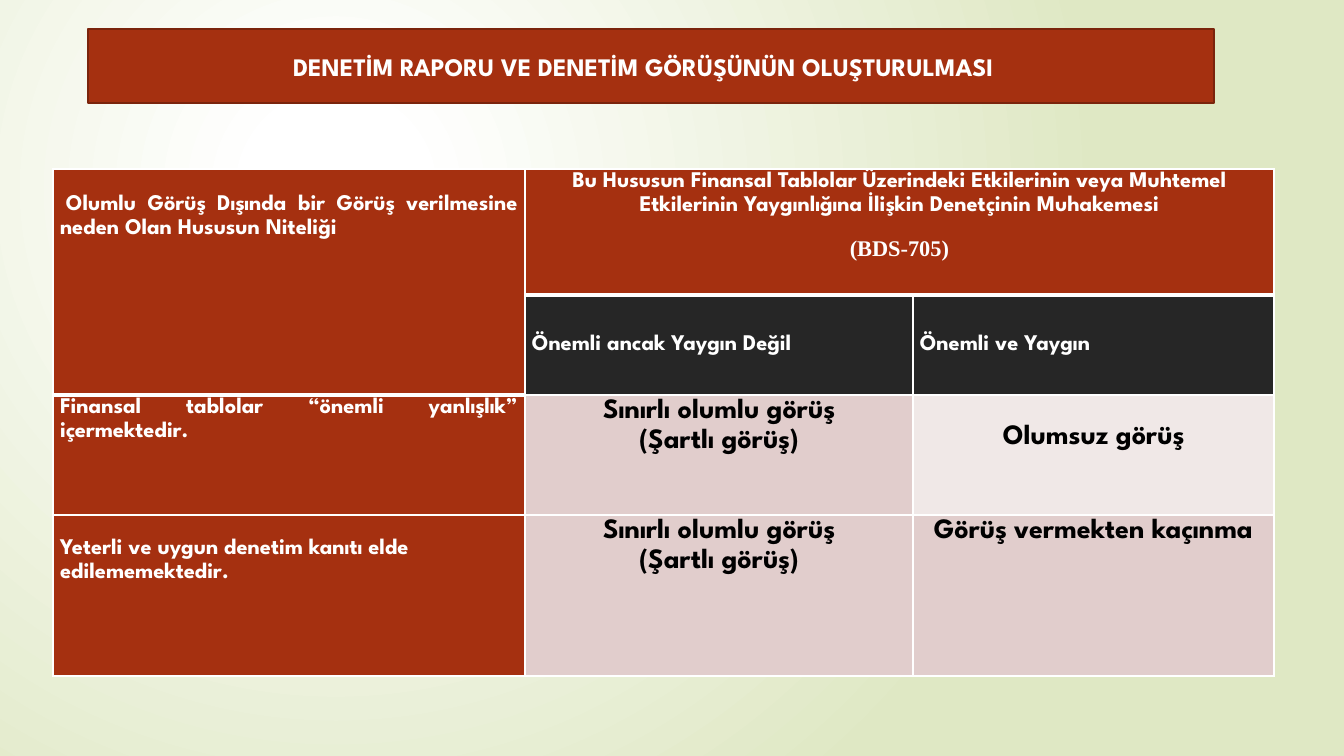
from lxml.etree import SubElement
from pptx import Presentation
from pptx.dml.color import RGBColor
from pptx.enum.text import MSO_ANCHOR, PP_ALIGN as Align
from pptx.oxml.ns import qn
from pptx.util import Pt

PX = 914400 / 100.8
FONT = "League Spartan"
RED, DARK, ROSE, PALE = "A53010", "262626", "E1CDCC", "F0E8E7"
WHITE, BLACK = "FFFFFF", "000000"


def px(length):
    return round(length * PX)


def color(value):
    return RGBColor.from_string(value)


presentation = Presentation()
presentation.slide_width = px(1344)
presentation.slide_height = px(756)
slide = presentation.slides.add_slide(presentation.slide_layouts[5])

background = slide.background.fill
background.gradient()
for stop, position, value in zip(background.gradient_stops, (0.1, 1), (WHITE, "DFE8C4")):
    stop.position = position
    stop.color.rgb = color(value)
gradient = slide.element.find(".//" + qn("a:gradFill"))
gradient.remove(gradient.find(qn("a:lin")))
circle = SubElement(gradient, qn("a:path"), path="circle")
SubElement(circle, qn("a:fillToRect"), l="50000", t="50000", r="100000", b="100000")

title = slide.shapes.title
title.left, title.top, title.width, title.height = px(88), px(29), px(1126), px(74)
title.fill.solid()
title.fill.fore_color.rgb = color(RED)
title.line.color.rgb = color("7A240C")
title.line.width = Pt(1.25)
title.text_frame.text = "DENETİM RAPORU VE DENETİM GÖRÜŞÜNÜN OLUŞTURULMASI"
title.text_frame.vertical_anchor = MSO_ANCHOR.MIDDLE
title.text_frame.margin_right = px(25)
paragraph = title.text_frame.paragraphs[0]
paragraph.alignment = Align.CENTER
font = paragraph.runs[0].font
font.name, font.size, font.bold = FONT, Pt(18), True
font.color.rgb = color(WHITE)

column_widths = (472, 388, 361)
row_heights = (126, 100, 120, 161)
table = slide.shapes.add_table(
    4, 3, px(53), px(169), px(sum(column_widths)), px(sum(row_heights))
).table
for column, width in zip(table.columns, column_widths):
    column.width = px(width)
for row, height in zip(table.rows, row_heights):
    row.height = px(height)

fills = (
    (RED, RED, RED),
    (RED, DARK, DARK),
    (RED, ROSE, PALE),
    (RED, ROSE, ROSE),
)
heavy_bottoms = {(0, 0), (1, 0), (0, 1), (0, 2)}
for row, row_fills in enumerate(fills):
    for column, fill in enumerate(row_fills):
        cell = table.cell(row, column)
        properties = cell._tc.get_or_add_tcPr()
        for side in "LRTB":
            width = 3 if side == "B" and (row, column) in heavy_bottoms else 1
            border = SubElement(properties, qn(f"a:ln{side}"), w=str(Pt(width)))
            border_fill = SubElement(border, qn("a:solidFill"))
            SubElement(border_fill, qn("a:srgbClr"), val=WHITE)
        cell.fill.solid()
        cell.fill.fore_color.rgb = color(fill)
table.cell(0, 0).merge(table.cell(1, 0))
table.cell(0, 1).merge(table.cell(0, 2))

qualified = "Sınırlı olumlu görüş\n(Şartlı görüş)"
cells = (
    (0, 0, "Olumlu Görüş Dışında bir Görüş verilmesine neden Olan Hususun Niteliği",
     Align.JUSTIFY, 23, 0),
    (0, 1, "Bu Hususun Finansal Tablolar Üzerindeki Etkilerinin veya Muhtemel "
           "Etkilerinin Yaygınlığına İlişkin Denetçinin Muhakemesi\n(BDS-705)",
     Align.CENTER, 0, 6),
    (1, 1, "Önemli ancak Yaygın Değil", Align.LEFT, 37, 0),
    (1, 2, "Önemli ve Yaygın", Align.LEFT, 37, 0),
    (2, 0, "Finansal tablolar “önemli yanlışlık” içermektedir.", Align.JUSTIFY, 0, 0),
    (2, 1, qualified, Align.CENTER, 0, 0),
    (2, 2, "Olumsuz görüş", Align.CENTER, 26, 0),
    (3, 0, "Yeterli ve uygun denetim kanıtı elde edilememektedir.", Align.LEFT, 21, 0),
    (3, 1, qualified, Align.CENTER, 0, 0),
    (3, 2, "Görüş vermekten kaçınma", Align.CENTER, 0, 0),
)
for row, column, text, alignment, top, spacing in cells:
    cell = table.cell(row, column)
    cell.margin_left = cell.margin_right = px(7)
    cell.margin_top, cell.margin_bottom = px(top), 0
    cell.text_frame.text = text
    is_opinion = row > 1 and column > 0
    for paragraph in cell.text_frame.paragraphs:
        paragraph.alignment = alignment
        paragraph.line_spacing = 1.15
        paragraph.space_before = paragraph.space_after = Pt(spacing)
        font = paragraph.runs[0].font
        font.name, font.bold = FONT, True
        font.size = Pt(20 if is_opinion else 16)
        font.color.rgb = color(BLACK if is_opinion else WHITE)
table.cell(0, 0).text_frame.paragraphs[0]._p.get_or_add_pPr().set("indent", str(px(6)))
table.cell(0, 1).text_frame.paragraphs[1].runs[0].font.name = "Times New Roman"

presentation.save("out.pptx")
